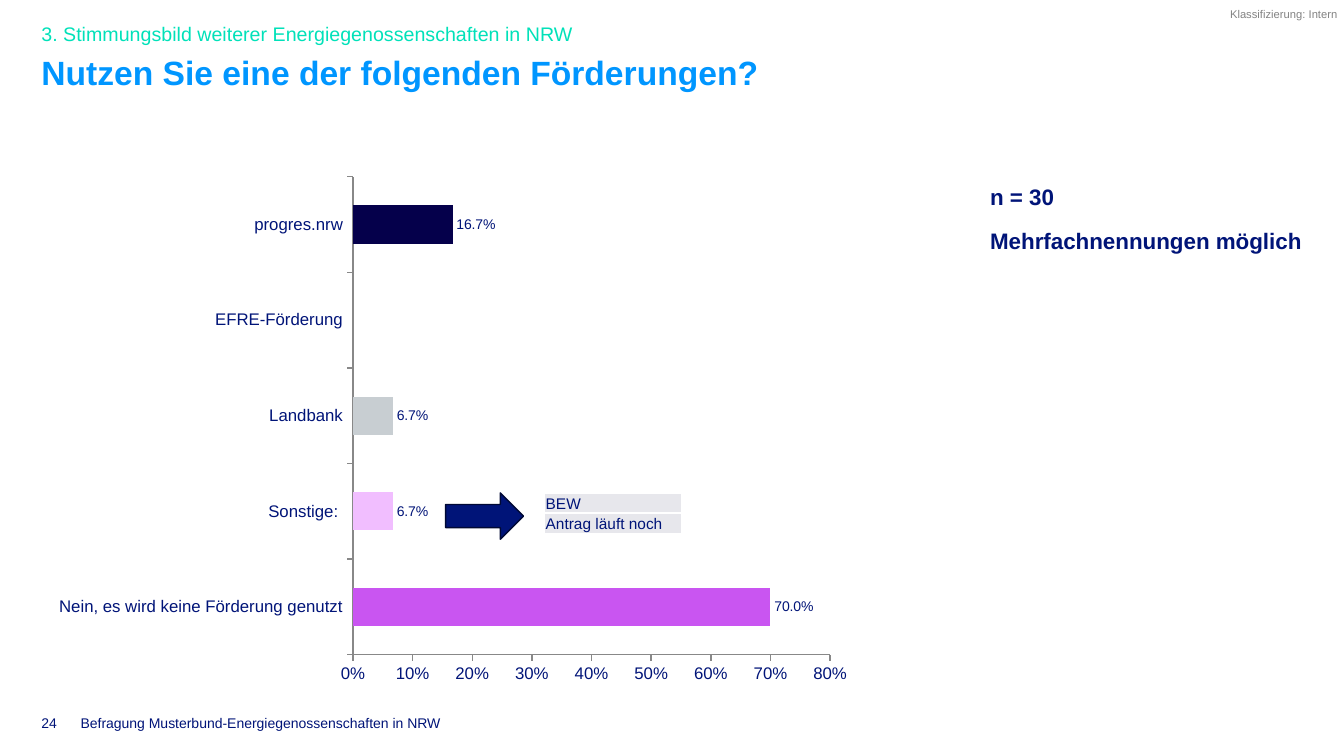
from lxml.etree import SubElement
from pptx import Presentation
from pptx.chart.data import CategoryChartData
from pptx.dml.color import RGBColor
from pptx.enum.chart import XL_CHART_TYPE, XL_LABEL_POSITION, XL_TICK_MARK
from pptx.enum.shapes import MSO_SHAPE
from pptx.enum.text import MSO_ANCHOR, MSO_AUTO_SIZE, PP_ALIGN
from pptx.oxml.ns import qn
from pptx.util import Inches, Pt

SLIDE_WIDTH, SLIDE_HEIGHT = Inches(13.33), Inches(7.5)
COLORS = {
    "navy": "001478", "outline": "000935", "blue": "0096FF", "mint": "00E1B9",
    "gray": "838383", "axis": "888888", "cell": "E7E7EC", "white": "FFFFFF",
    "violet": "C955F1", "pink": "F1BEFF", "silver": "C8CED2", "midnight": "05004B",
}
ANSWERS = [  # label, share, colour, from the bottom bar up
    ("Nein, es wird keine Förderung genutzt", 0.7, "violet"),
    ("Sonstige: ", 0.067, "pink"),
    ("Landbank", 0.067, "silver"),
    ("EFRE-Förderung", None, "blue"),
    ("progres.nrw", 0.167, "midnight"),
]
PLOT_AREA = {"x": 0.38, "y": 0.02, "w": 0.58, "h": 0.91}


def color(name):
    return RGBColor.from_string(COLORS[name])


def percent_box(left, top, width, height):
    """Turn percentages of the slide into left, top, width and height."""
    return tuple(int(share * side / 100) for share, side in (
        (left, SLIDE_WIDTH), (top, SLIDE_HEIGHT), (width, SLIDE_WIDTH), (height, SLIDE_HEIGHT)))


def set_all(target, **values):
    for name, value in values.items():
        setattr(target, name, value)


def style_font(font, size, color_name="navy", bold=False):
    set_all(font, name="Arial", size=Pt(size), bold=bold)
    font.color.rgb = color(color_name)


def write_text(shape, box, lines, size, color_name="navy", bold=False, gap=0,
               anchor=MSO_ANCHOR.TOP, wrap=True):
    set_all(shape, **dict(zip(("left", "top", "width", "height"), box)))
    frame = shape.text_frame
    set_all(frame, margin_left=0, margin_top=0, margin_right=0, margin_bottom=0,
            word_wrap=wrap, auto_size=MSO_AUTO_SIZE.NONE, vertical_anchor=anchor)
    for index, line in enumerate(lines):
        paragraph = frame.paragraphs[0] if index == 0 else frame.add_paragraph()
        paragraph.text = line
        properties = paragraph._p.get_or_add_pPr()
        properties.set("marL", "0")
        properties.set("indent", "0")
        SubElement(properties, qn("a:buNone"))
        set_all(paragraph, alignment=PP_ALIGN.LEFT, space_before=Pt(gap if index else 0))
        style_font(paragraph.font, size, color_name, bold)


def add_text(slide, box, lines, size, **style):
    write_text(slide.shapes.add_textbox(*box), box, lines, size, **style)


def add_header(slide):
    write_text(slide.shapes.title, percent_box(3.08, 6.93, 93.92, 11.6),
               ["Nutzen Sie eine der folgenden Förderungen?"], 24, "blue", bold=True)
    write_text(slide.placeholders[1], percent_box(3.08, 2.27, 61.74, 3.73),
               ["3. Stimmungsbild weiterer Energiegenossenschaften in NRW"], 14, "mint",
               anchor=MSO_ANCHOR.BOTTOM)
    add_text(slide, percent_box(91.52, 0.93, 8.48, 1.73), ["Klassifizierung: Intern"], 8,
             color_name="gray")


def add_footer(slide):
    for left, width, text in (
            (3.08, 1.8, "24"),
            (6, 42.24, "Befragung Musterbund-Energiegenossenschaften in NRW")):
        add_text(slide, percent_box(left, 94.67, width, 2.13), [text], 10,
                 anchor=MSO_ANCHOR.BOTTOM, wrap=False)


def fix_plot_area(chart):
    plot_area = chart._chartSpace.chart.plotArea
    for old in plot_area.findall(qn("c:layout")):
        plot_area.remove(old)
    layout = plot_area.makeelement(qn("c:layout"), {})
    plot_area.insert(0, layout)
    manual = SubElement(layout, qn("c:manualLayout"))
    settings = {"layoutTarget": "inner", "xMode": "edge", "yMode": "edge", **PLOT_AREA}
    for name, value in settings.items():
        SubElement(manual, qn(f"c:{name}"), val=str(value))


def add_answer_chart(slide, box):
    labels, shares, color_names = zip(*ANSWERS)
    data = CategoryChartData(number_format="0.0%")
    data.categories = labels
    data.add_series("Anteil", shares)
    chart = slide.shapes.add_chart(XL_CHART_TYPE.BAR_CLUSTERED, *box, data).chart
    set_all(chart, has_legend=False, has_title=False)
    style_font(chart.font, 10)
    fix_plot_area(chart)

    for axis in (chart.category_axis, chart.value_axis):
        set_all(axis, has_major_gridlines=False, major_tick_mark=XL_TICK_MARK.OUTSIDE,
                minor_tick_mark=XL_TICK_MARK.NONE)
        style_font(axis.tick_labels.font, 12)
        axis.format.line.color.rgb = color("axis")
        axis.format.line.width = Pt(1)
    set_all(chart.value_axis, minimum_scale=0, maximum_scale=0.8, major_unit=0.1)
    set_all(chart.value_axis.tick_labels, number_format="0%", number_format_is_linked=False)

    plot = chart.plots[0]
    set_all(plot, gap_width=150, vary_by_categories=False, has_data_labels=True)
    set_all(plot.data_labels, show_value=True, number_format="#0.0%",
            number_format_is_linked=False, position=XL_LABEL_POSITION.OUTSIDE_END)
    style_font(plot.data_labels.font, 10)
    for index, color_name in enumerate(color_names):
        fill = plot.series[0].points[index].format.fill
        fill.solid()
        fill.fore_color.rgb = color(color_name)


def format_cell(cell, text):
    set_all(cell, text=text, vertical_anchor=MSO_ANCHOR.BOTTOM, margin_left=Inches(0.01),
            margin_top=Inches(0.01), margin_right=Inches(0.01), margin_bottom=0)
    style_font(cell.text_frame.paragraphs[0].font, 11)
    properties = cell._tc.get_or_add_tcPr()
    for side in "LRTB":
        border = SubElement(properties, qn(f"a:ln{side}"), w=str(Pt(1)))
        fill = SubElement(border, qn("a:solidFill"))
        SubElement(fill, qn("a:srgbClr"), val=COLORS["white"])
    cell.fill.solid()
    cell.fill.fore_color.rgb = color("cell")


def add_other_answers(slide, box, answers):
    """Place an arrow and, to its right, the table of free answers."""
    left, top, width, height = box
    table = slide.shapes.add_table(len(answers), 1, left + int(0.42 * width), top,
                                   int(0.58 * width), int(0.87 * height)).table
    set_all(table, first_row=False, horz_banding=False)
    for index, answer in enumerate(answers):
        format_cell(table.cell(index, 0), answer)

    arrow = slide.shapes.add_shape(MSO_SHAPE.RIGHT_ARROW, left, top, int(0.33 * width), height)
    arrow.shadow.inherit = False
    arrow.fill.solid()
    arrow.fill.fore_color.rgb = color("navy")
    arrow.line.color.rgb = color("outline")
    arrow.line.width = Pt(1)


def build_survey_slide(presentation):
    slide = presentation.slides.add_slide(presentation.slide_layouts[1])
    add_header(slide)
    add_text(slide, percent_box(73.67, 24.27, 23.6, 11.6),
             ["n = 30", "Mehrfachnennungen möglich"], 16, bold=True, gap=12)
    add_answer_chart(slide, percent_box(3, 22, 61.22, 69.47))
    add_other_answers(slide, percent_box(33.16, 65.2, 17.55, 6.13),
                      ["BEW", "Antrag läuft noch"])
    add_footer(slide)


def main():
    presentation = Presentation()
    set_all(presentation, slide_width=SLIDE_WIDTH, slide_height=SLIDE_HEIGHT)
    build_survey_slide(presentation)
    presentation.save("out.pptx")


if __name__ == "__main__":
    main()
